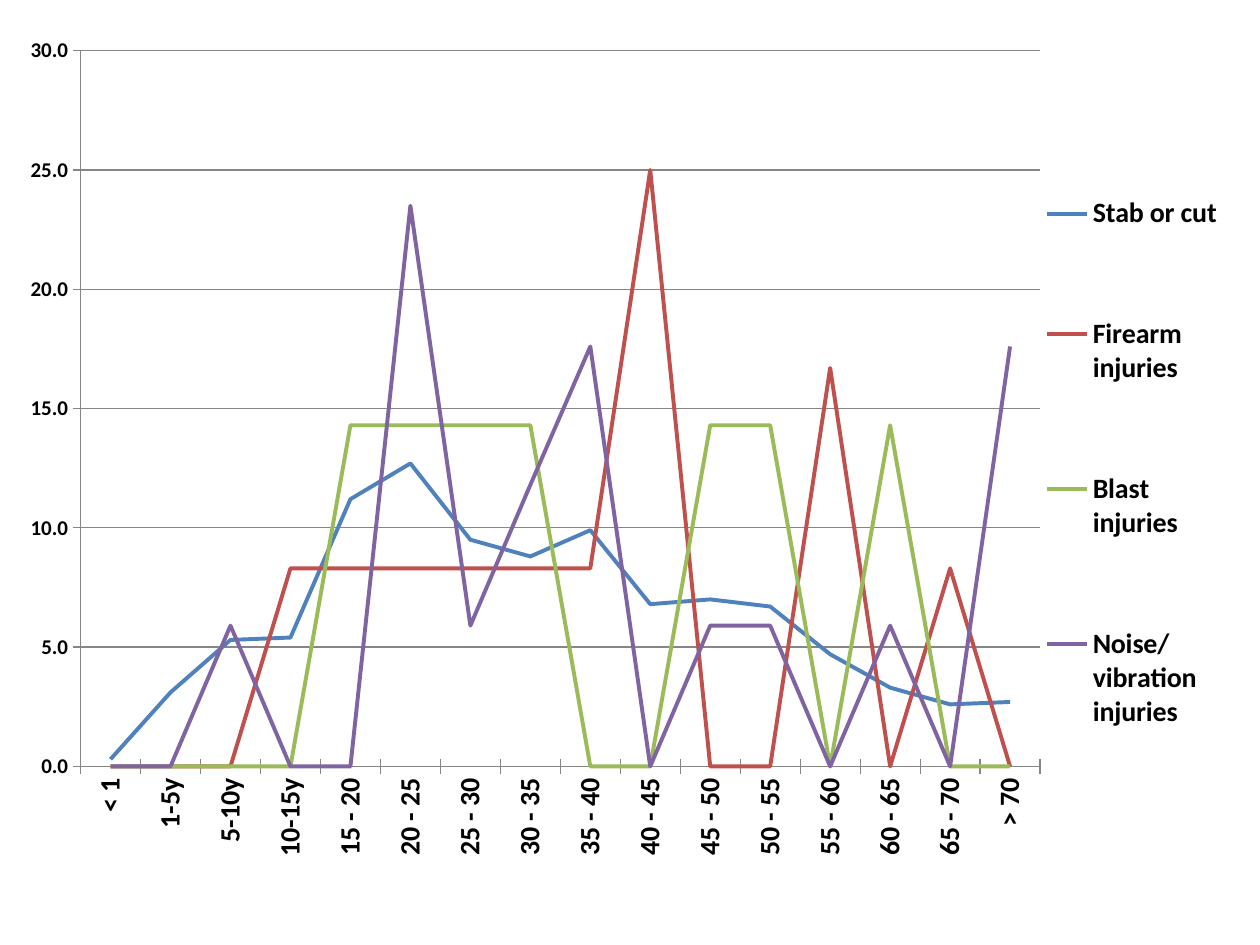
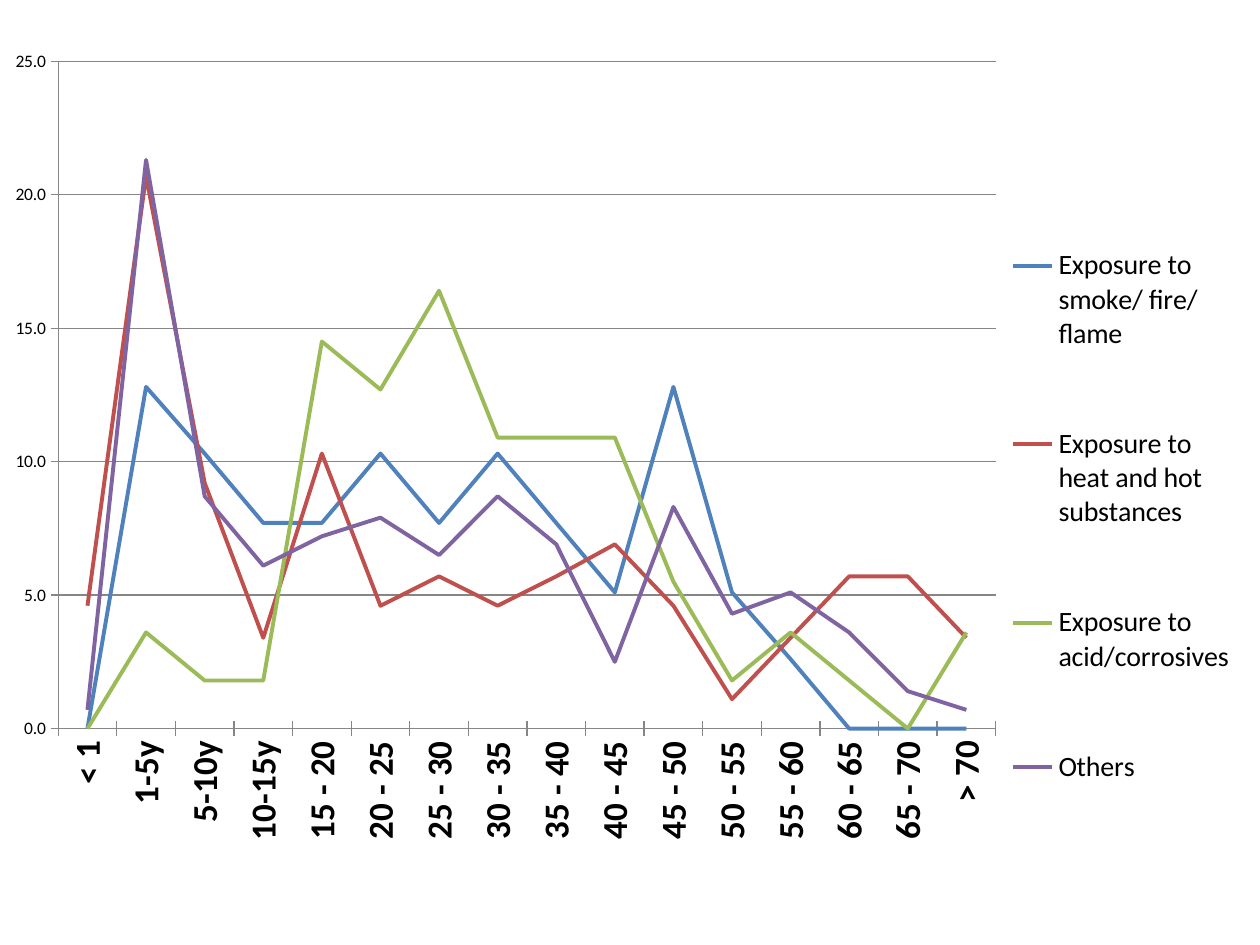
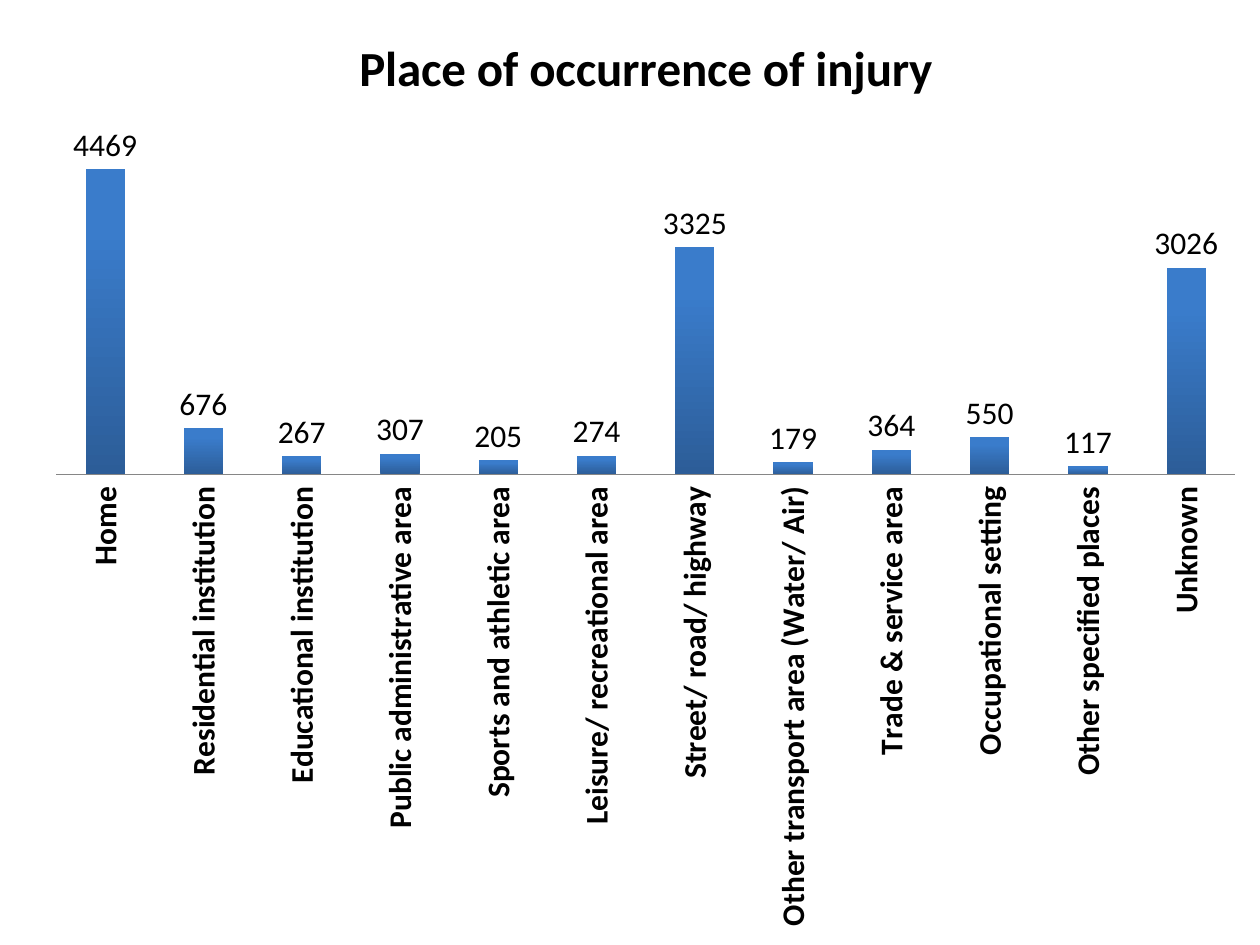
from lxml.etree import SubElement
from pptx import Presentation
from pptx.chart.data import CategoryChartData
from pptx.dml.color import RGBColor
from pptx.enum.chart import (XL_CHART_TYPE, XL_LABEL_POSITION, XL_LEGEND_POSITION,
                             XL_TICK_LABEL_POSITION, XL_TICK_MARK)
from pptx.oxml.ns import qn
from pptx.util import Inches, Pt

FONT = "Calibri"
BLACK = RGBColor(0x00, 0x00, 0x00)
AXIS_GREY = RGBColor(0x86, 0x86, 0x86)
BAR_BOTTOM = RGBColor(0x2C, 0x5D, 0x98)
BAR_TOP = RGBColor(0x3A, 0x7C, 0xCB)
SERIES_COLORS = [
    RGBColor(0x4F, 0x81, 0xBD),
    RGBColor(0xC0, 0x50, 0x4D),
    RGBColor(0x9B, 0xBB, 0x59),
    RGBColor(0x80, 0x64, 0xA2),
]

AGE_GROUPS = ["< 1", "1-5y", "5-10y", "10-15y"]
AGE_GROUPS += [f"{age} - {age + 5}" for age in range(15, 70, 5)] + ["> 70"]

VIOLENT_INJURIES = {
    "Stab or cut": [0.3, 3.1, 5.3, 5.4, 11.2, 12.7, 9.5, 8.8,
                    9.9, 6.8, 7, 6.7, 4.7, 3.3, 2.6, 2.7],
    "Firearm injuries": [0, 0, 0, 8.3, 8.3, 8.3, 8.3, 8.3,
                         8.3, 25, 0, 0, 16.7, 0, 8.3, 0],
    "Blast injuries": [0, 0, 0, 0, 14.3, 14.3, 14.3, 14.3,
                       0, 0, 14.3, 14.3, 0, 14.3, 0, 0],
    "Noise/ vibration injuries": [0, 0, 5.9, 0, 0, 23.5, 5.9, 11.8,
                                  17.6, 0, 5.9, 5.9, 0, 5.9, 0, 17.6],
}
EXPOSURES = {
    "Exposure to smoke/ fire/ flame": [0, 12.8, 10.3, 7.7, 7.7, 10.3, 7.7, 10.3,
                                       7.7, 5.1, 12.8, 5.1, 2.6, 0, 0, 0],
    "Exposure to heat and hot substances": [4.6, 20.7, 9.2, 3.4, 10.3, 4.6, 5.7, 4.6,
                                            5.7, 6.9, 4.6, 1.1, 3.4, 5.7, 5.7, 3.4],
    "Exposure to acid/corrosives": [0, 3.6, 1.8, 1.8, 14.5, 12.7, 16.4, 10.9,
                                    10.9, 10.9, 5.5, 1.8, 3.6, 1.8, 0, 3.6],
    "Others": [0.7, 21.3, 8.7, 6.1, 7.2, 7.9, 6.5, 8.7,
               6.9, 2.5, 8.3, 4.3, 5.1, 3.6, 1.4, 0.7],
}
PLACES = {
    "Home": 4469,
    "Residential institution": 676,
    "Educational institution": 267,
    "Public administrative area": 307,
    "Sports and athletic area": 205,
    "Leisure/ recreational area": 274,
    "Street/ road/ highway": 3325,
    "Other transport area (Water/ Air)": 179,
    "Trade & service area": 364,
    "Occupational setting": 550,
    "Other specified places": 117,
    "Unknown": 3026,
}


def style_font(font, size, bold=False):
    font.color.rgb = BLACK
    for name, value in {"name": FONT, "size": Pt(size), "bold": bold}.items():
        setattr(font, name, value)


def style_line(line, color, width):
    line.color.rgb = color
    line.width = Pt(width)


def set_layout(element, box, inner=False):
    """Fix a chart part at (x, y, width, height), as fractions of the chart."""
    layout = element.find(qn("c:layout"))
    if layout is None:
        layout = SubElement(element, qn("c:layout"))
        anchor = element.find(qn("c:legendPos"))
        if anchor is not None:
            anchor.addnext(layout)
        else:
            element.insert(0, layout)
    manual = SubElement(layout, qn("c:manualLayout"))
    settings = [("layoutTarget", "inner")] if inner else []
    settings += [("xMode", "edge"), ("yMode", "edge"), *zip("xywh", box)]
    for tag, value in settings:
        SubElement(manual, qn(f"c:{tag}")).set("val", str(value))


def add_chart(slide, box, kind, categories, series, size):
    data = CategoryChartData()
    data.categories = categories
    for name, values in series.items():
        data.add_series(name, values)
    chart = slide.shapes.add_chart(kind, *map(Inches, box), data).chart
    style_font(chart.font, size)
    chart.has_title = False
    chart.has_legend = False
    chart.plots[0].vary_by_categories = False
    return chart


def style_category_axis(axis, size, tick_mark):
    axis.major_tick_mark = tick_mark
    axis.minor_tick_mark = XL_TICK_MARK.NONE
    axis.tick_label_position = XL_TICK_LABEL_POSITION.LOW
    style_line(axis.format.line, AXIS_GREY, 0.75)
    style_font(axis.tick_labels.font, size, bold=True)
    body = axis._element.find(".//" + qn("a:bodyPr"))
    body.set("rot", "-5400000")
    body.set("vert", "horz")


def style_value_axis(axis, maximum, size, bold):
    settings = {
        "minimum_scale": 0, "maximum_scale": maximum, "major_unit": 5,
        "has_major_gridlines": True,
        "major_tick_mark": XL_TICK_MARK.CROSS,
        "minor_tick_mark": XL_TICK_MARK.NONE,
    }
    for name, value in settings.items():
        setattr(axis, name, value)
    style_line(axis.format.line, AXIS_GREY, 0.75)
    style_line(axis.major_gridlines.format.line, AXIS_GREY, 0.75)
    labels = axis.tick_labels
    labels.number_format = "0.0"
    labels.number_format_is_linked = False
    style_font(labels.font, size, bold)


def add_age_slide(slide, box, series, maximum, plot_box, legend_box,
                  age_size, value_size, bold):
    """Line chart of the share of injuries by age group."""
    chart = add_chart(slide, box, XL_CHART_TYPE.LINE, AGE_GROUPS, series, 10)
    style_category_axis(chart.category_axis, age_size, XL_TICK_MARK.CROSS)
    style_value_axis(chart.value_axis, maximum, value_size, bold)
    for injury, color in zip(chart.plots[0].series, SERIES_COLORS):
        style_line(injury.format.line, color, 2.25)
        injury.smooth = False
    chart.has_legend = True
    legend = chart.legend
    legend.position = XL_LEGEND_POSITION.RIGHT
    legend.include_in_layout = False
    style_font(legend.font, 16, bold)
    set_layout(legend._element, legend_box)
    set_layout(chart._chartSpace.chart.plotArea, plot_box, inner=True)


def add_place_slide(slide, box):
    chart = add_chart(slide, box, XL_CHART_TYPE.COLUMN_CLUSTERED, list(PLACES),
                      {"Series 1": list(PLACES.values())}, 18)
    chart.has_title = True
    title = chart.chart_title.text_frame
    title.text = "Place of occurrence of injury"
    style_font(title.paragraphs[0].runs[0].font, 28, bold=True)

    style_category_axis(chart.category_axis, 18, XL_TICK_MARK.NONE)
    chart.value_axis.has_major_gridlines = False
    chart.value_axis.visible = False

    columns = chart.plots[0]
    columns.gap_width = 150
    columns.overlap = -25
    columns.has_data_labels = True
    labels = columns.data_labels
    labels.show_value = True
    labels.position = XL_LABEL_POSITION.OUTSIDE_END
    style_font(labels.font, 18)

    fill = columns.series[0].format.fill
    fill.gradient()
    fill.gradient_angle = 90
    for stop, color, position in zip(fill.gradient_stops, (BAR_BOTTOM, BAR_TOP), (0, 0.8)):
        stop.color.rgb = color
        stop.position = position


def main():
    deck = Presentation()
    deck.slide_width, deck.slide_height = Inches(10), Inches(7.5)
    blank = deck.slide_layouts[6]
    add_age_slide(deck.slides.add_slide(blank), (0.17, 0.25, 9.58, 6.92),
                  VIOLENT_INJURIES, 30, plot_box=(0.049, 0.022, 0.795, 0.821),
                  legend_box=(0.84, 0.09, 0.16, 0.81),
                  age_size=16, value_size=12, bold=True)
    add_age_slide(deck.slides.add_slide(blank), (0, 0.33, 9.83, 6.5),
                  EXPOSURES, 25, plot_box=(0.047, 0.024, 0.757, 0.815),
                  legend_box=(0.81, 0.16, 0.19, 0.93),
                  age_size=20, value_size=10, bold=False)
    add_place_slide(deck.slides.add_slide(blank), (0.25, 0, 9.75, 7.5))
    deck.save("out.pptx")


if __name__ == "__main__":
    main()
